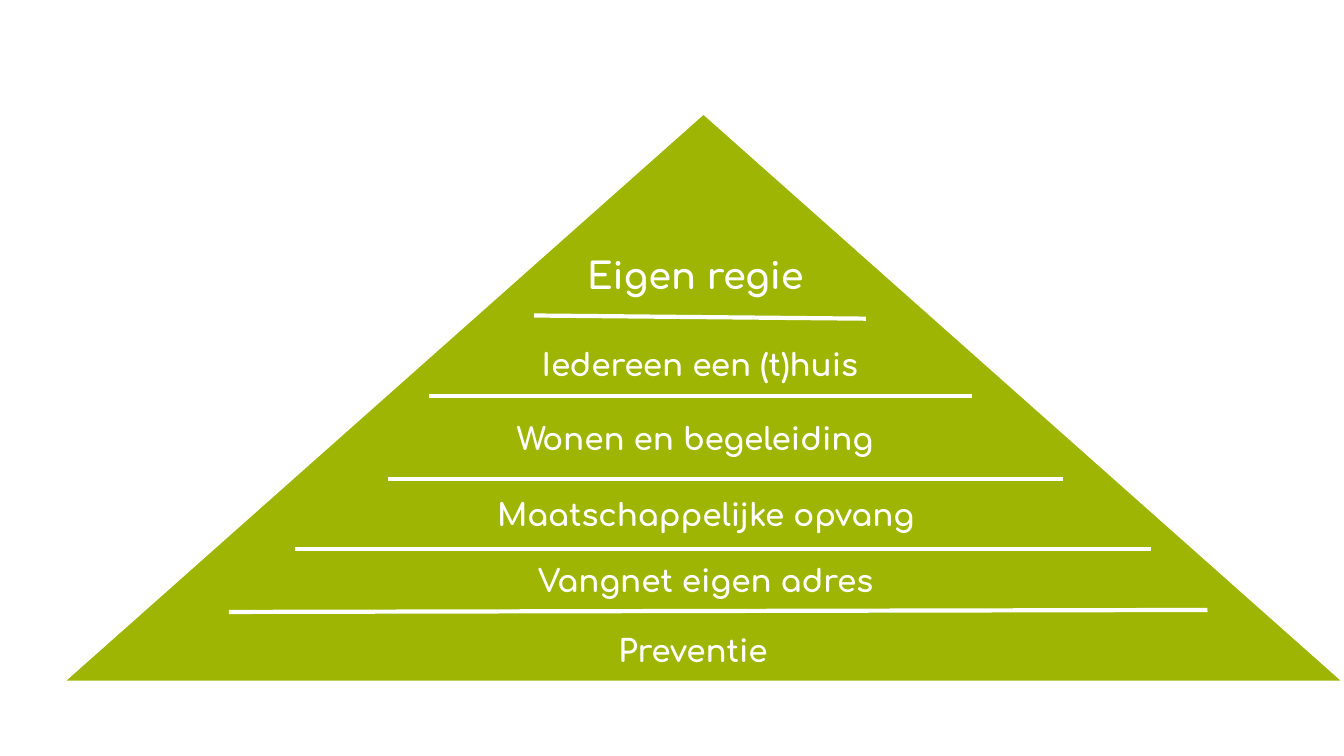
from dataclasses import dataclass
from typing import Optional

from lxml.etree import SubElement
from pptx import Presentation
from pptx.dml.color import RGBColor
from pptx.enum.shapes import MSO_CONNECTOR, MSO_SHAPE
from pptx.enum.text import MSO_ANCHOR, MSO_AUTO_SIZE, PP_ALIGN
from pptx.oxml.ns import qn
from pptx.shapes.autoshape import Shape
from pptx.slide import Slide
from pptx.util import Cm, Pt


@dataclass(frozen=True)
class Theme:
    green: RGBColor = RGBColor(0x9F, 0xB5, 0x04)
    white: RGBColor = RGBColor(0xFF, 0xFF, 0xFF)
    font: str = "Comfortaa"
    top: float = 26.1
    label: float = 22.1
    rule: float = 3
    lead: float = 1.4


@dataclass(frozen=True)
class Rule:
    x1: float
    y1: float
    x2: float
    y2: float


@dataclass(frozen=True)
class Level:
    text: str
    left: float
    top: float
    width: float
    rule: Optional[Rule] = None


THEME = Theme()

# Pyramid levels from the top down, in cm, each with the line below it
LEVELS = [
    Level("Eigen regie", 14.45, 6.2, 6.15, Rule(13.46, 7.95, 21.82, 8.03)),
    Level("Iedereen een (t)huis", 12.62, 8.56, 10.03, Rule(10.8, 9.98, 24.49, 9.98)),
    Level("Wonen en begeleiding", 12.5, 10.41, 10.03, Rule(9.78, 12.07, 26.8, 12.07)),
    Level("Maatschappelijke opvang", 11.25, 12.34, 13.06, Rule(7.44, 13.84, 29.01, 13.84)),
    Level("Vangnet eigen adres", 11.25, 14, 13.06, Rule(5.77, 15.42, 30.43, 15.37)),
    Level("Preventie", 12.45, 15.75, 10.03),
]


def write(box: Shape, text: str, *, size: float, color: RGBColor = THEME.white,
          bold: bool = True, align: PP_ALIGN = PP_ALIGN.CENTER) -> None:
    frame = box.text_frame
    frame.word_wrap = True
    frame.auto_size = MSO_AUTO_SIZE.NONE
    frame.vertical_anchor = MSO_ANCHOR.TOP
    frame.margin_left = frame.margin_right = 0
    frame.margin_top = frame.margin_bottom = 0
    para = frame.paragraphs[0]
    para.alignment = align
    para.space_before = Pt(0)
    para.line_spacing = Pt(round(size * THEME.lead, 1))
    run = para.add_run()
    run.text = text
    run.font.name = THEME.font
    run.font.size = Pt(size)
    run.font.bold = bold
    run.font.color.rgb = color


def place(box: Shape, level: Level) -> None:
    box.left, box.top = Cm(level.left), Cm(level.top)
    box.width, box.height = Cm(level.width), Cm(1.1)


def draw_rule(slide: Slide, rule: Rule) -> None:
    line = slide.shapes.add_connector(
        MSO_CONNECTOR.STRAIGHT, Cm(rule.x1), Cm(rule.y1), Cm(rule.x2), Cm(rule.y2))
    line.line.color.rgb = THEME.white
    line.line.width = Pt(THEME.rule)
    SubElement(line.element.spPr, qn("a:effectLst"))


def draw_base(slide: Slide) -> Shape:
    base = slide.shapes.add_shape(
        MSO_SHAPE.ISOSCELES_TRIANGLE, Cm(1.68), Cm(2.9), Cm(32.1), Cm(14.25))
    base.shadow.inherit = False
    base.fill.solid()
    base.fill.fore_color.rgb = THEME.green
    base.line.fill.background()
    return base


def main() -> None:
    deck = Presentation()
    deck.slide_width, deck.slide_height = Cm(33.87), Cm(19.05)
    slide = deck.slides.add_slide(deck.slide_layouts[5])

    # Pyramid, kept behind the title
    title = slide.shapes.title
    title.element.addprevious(draw_base(slide).element)

    # The peak is the title, the other levels are labels
    for level in LEVELS:
        peak = level is LEVELS[0]
        box = title if peak else slide.shapes.add_textbox(0, 0, 0, 0)
        place(box, level)
        write(box, level.text, size=THEME.top if peak else THEME.label)
        if level.rule:
            draw_rule(slide, level.rule)

    deck.save("out.pptx")


if __name__ == "__main__":
    main()
